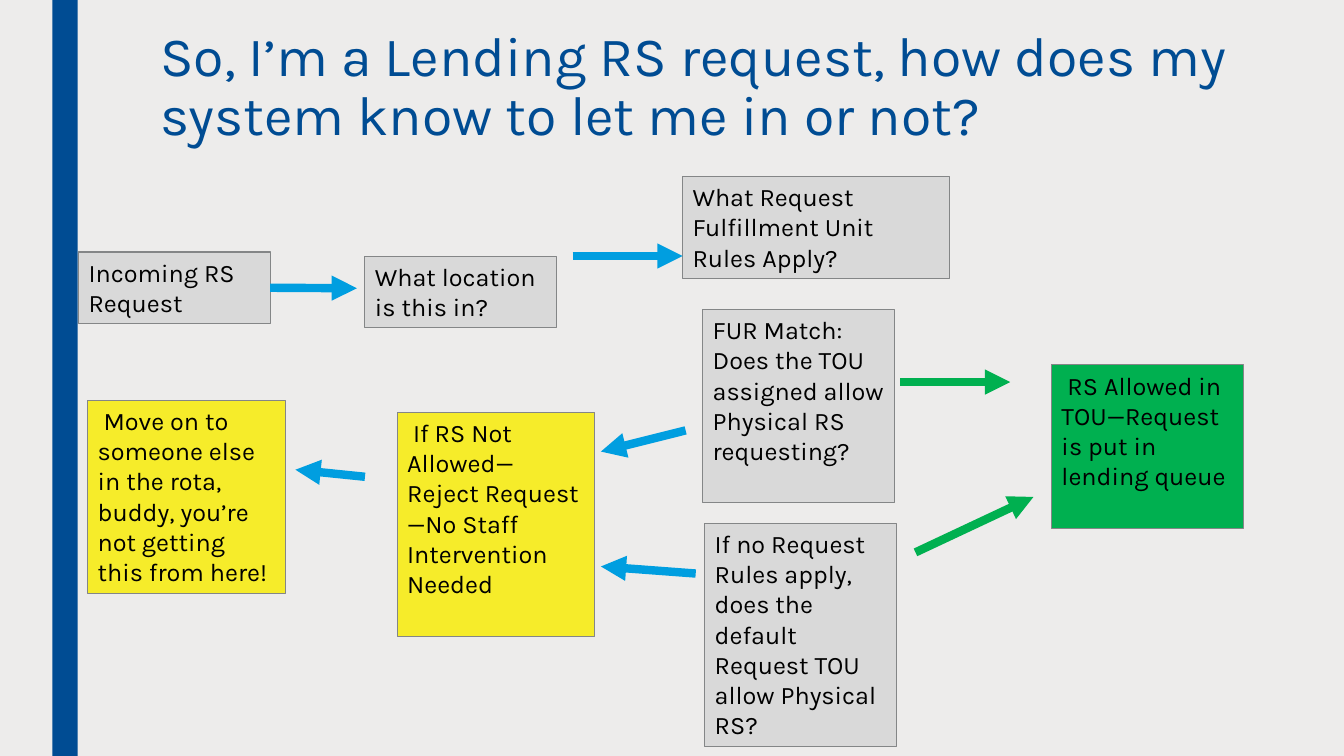
from lxml.etree import SubElement
from pptx import Presentation
from pptx.dml.color import RGBColor
from pptx.enum.shapes import MSO_CONNECTOR as Connector, MSO_SHAPE as Shape
from pptx.enum.text import MSO_ANCHOR as Anchor, MSO_AUTO_SIZE as AutoSize, PP_ALIGN as Align
from pptx.oxml.ns import qn
from pptx.util import Inches, Pt

COLORS = {
    "background": "EDECEB", "navy": "004C93", "blue": "009EE0",
    "green": "00B050", "yellow": "F6EC2A", "gray": "D9D9D9",
    "border": "848687", "black": "000000",
}
FRAME_FORMAT = {"word_wrap": True, "auto_size": AutoSize.NONE, "vertical_anchor": Anchor.TOP}
TITLE_FONT = {"name": "Karla", "size": Pt(39.6), "bold": False}
STEP_FONT = {"name": "Karla", "size": Pt(18), "bold": False}

TITLE = "So, I’m a Lending RS request, how does my system know to let me in or not?"
STEPS = {
    "incoming": ("Incoming RS Request", "gray", (0.78, 2.5, 1.9, 0.71)),
    "location": ("What location is this in?", "gray", (3.62, 2.54, 1.9, 0.71)),
    "rules": ("What Request Fulfillment Unit Rules Apply?", "gray", (6.77, 1.75, 2.65, 1.01)),
    "match": ("FUR Match: Does the TOU assigned allow Physical RS requesting?",
              "gray", (6.97, 3.07, 1.9, 1.92)),
    "default": ("If no Request Rules apply, does the default Request TOU allow Physical RS?",
                "gray", (6.99, 5.19, 1.9, 2.22)),
    "reject": (" If RS Not Allowed—Reject Request—No Staff Intervention Needed",
               "yellow", (3.94, 4.09, 1.96, 2.22)),
    "allowed": (" RS Allowed in TOU—Request is put in lending queue",
                "green", (10.43, 3.62, 1.9, 1.62)),
    "move_on": (" Move on to someone else in the rota, buddy, you’re not getting this from here!",
                "yellow", (0.87, 3.97, 1.96, 1.92)),
}
ARROWS = [
    ((2.68, 2.86), (3.54, 2.86), "blue", "incoming"),
    ((5.68, 2.54), (6.77, 2.54), "blue", None),
    ((8.93, 3.79), (10.02, 3.79), "green", None),
    ((9.08, 5.48), (10.25, 4.93), "green", None),
    ((6.8, 4.27), (5.96, 4.48), "blue", None),
    ((6.9, 5.69), (5.96, 5.62), "blue", None),
    ((3.62, 4.73), (2.93, 4.66), "blue", None),
]
RIGHT_SIDE = 3


def rgb(color):
    return RGBColor.from_string(COLORS[color])


def apply_format(target, values):
    for attribute, value in values.items():
        setattr(target, attribute, value)


def write_text(frame, text, font, color, spacing=None):
    apply_format(frame, FRAME_FORMAT)
    frame.text = text
    paragraph = frame.paragraphs[0]
    apply_format(paragraph, {"alignment": Align.LEFT, "line_spacing": spacing})
    run = paragraph.runs[0]
    apply_format(run.font, font)
    run.font.color.rgb = rgb(color)


def add_panel(slide, box, color):
    panel = slide.shapes.add_shape(Shape.RECTANGLE, *map(Inches, box))
    panel.shadow.inherit = False
    panel.fill.solid()
    panel.fill.fore_color.rgb = rgb(color)
    return panel


def place_side_bar(slide, box):
    add_panel(slide, box, "navy").line.fill.background()


def place_title(slide, box):
    title = slide.shapes.title
    apply_format(title, dict(zip(("left", "top", "width", "height"), map(Inches, box))))
    write_text(title.text_frame, TITLE, TITLE_FONT, "navy", 0.89)


def place_step(slide, text, color, box):
    step = add_panel(slide, box, color)
    step.line.color.rgb = rgb("border")
    step.line.width = Pt(0.75)
    write_text(step.text_frame, text, STEP_FONT, "black")
    return step


def place_arrow(slide, start, end, color, source=None):
    arrow = slide.shapes.add_connector(Connector.STRAIGHT, *map(Inches, start + end))
    arrow.line.color.rgb = rgb(color)
    arrow.line.width = Pt(6)
    SubElement(arrow.line._get_or_add_ln(), qn("a:tailEnd"), type="triangle")
    SubElement(arrow._element.spPr, qn("a:effectLst"))
    if source is not None:
        arrow.begin_connect(source, RIGHT_SIDE)


def place_flow(slide):
    steps = {key: place_step(slide, *step) for key, step in STEPS.items()}
    for start, end, color, source in ARROWS:
        place_arrow(slide, start, end, color, steps.get(source))


def main():
    deck = Presentation()
    deck.slide_width, deck.slide_height = Inches(13.33), Inches(7.5)
    slide = deck.slides.add_slide(deck.slide_layouts[5])
    slide.background.fill.solid()
    slide.background.fill.fore_color.rgb = rgb("background")
    place_side_bar(slide, (0.52, 0, 0.25, 7.5))
    place_title(slide, (1.49, 0.24, 10.84, 1.62))
    place_flow(slide)
    deck.save("out.pptx")


if __name__ == "__main__":
    main()
